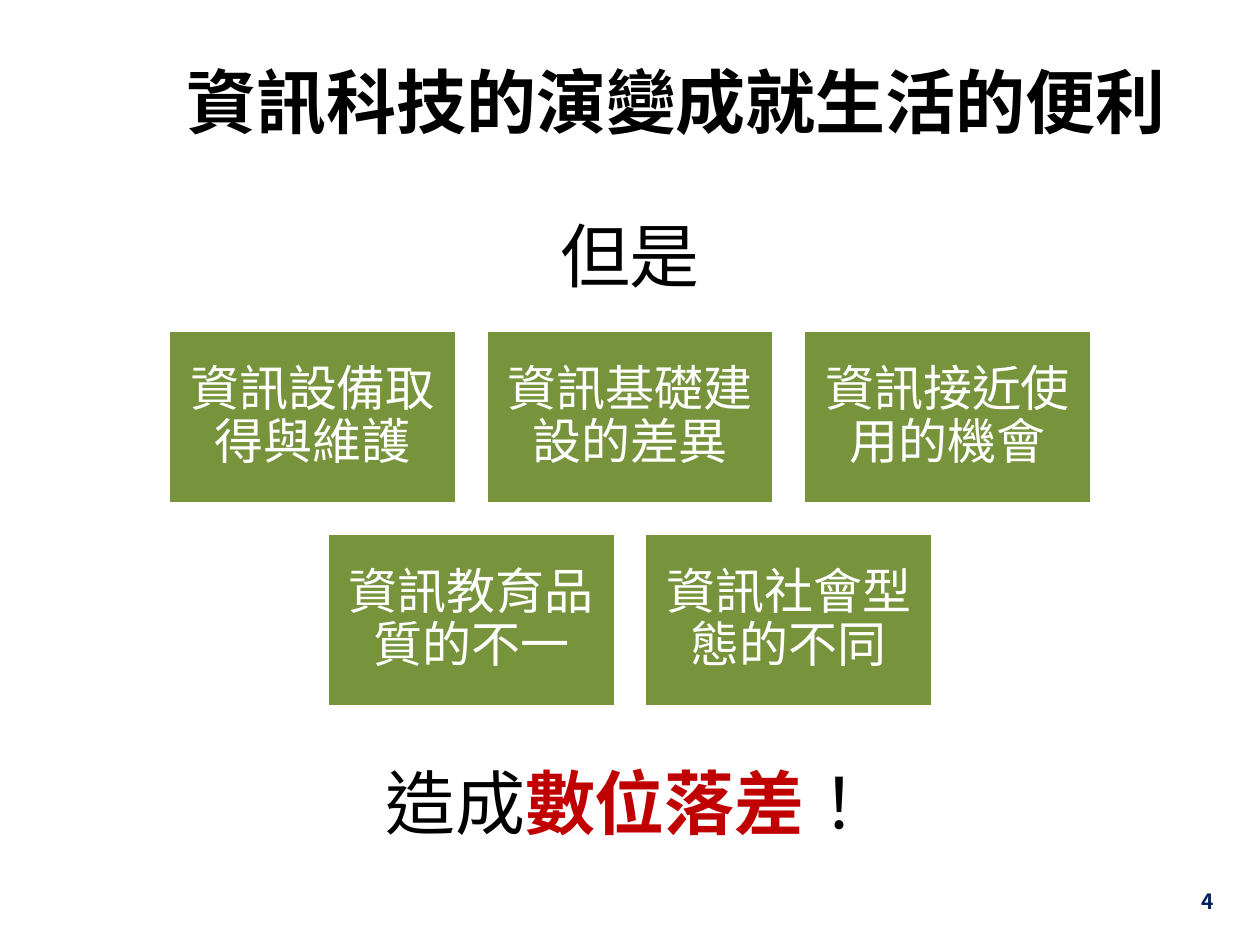
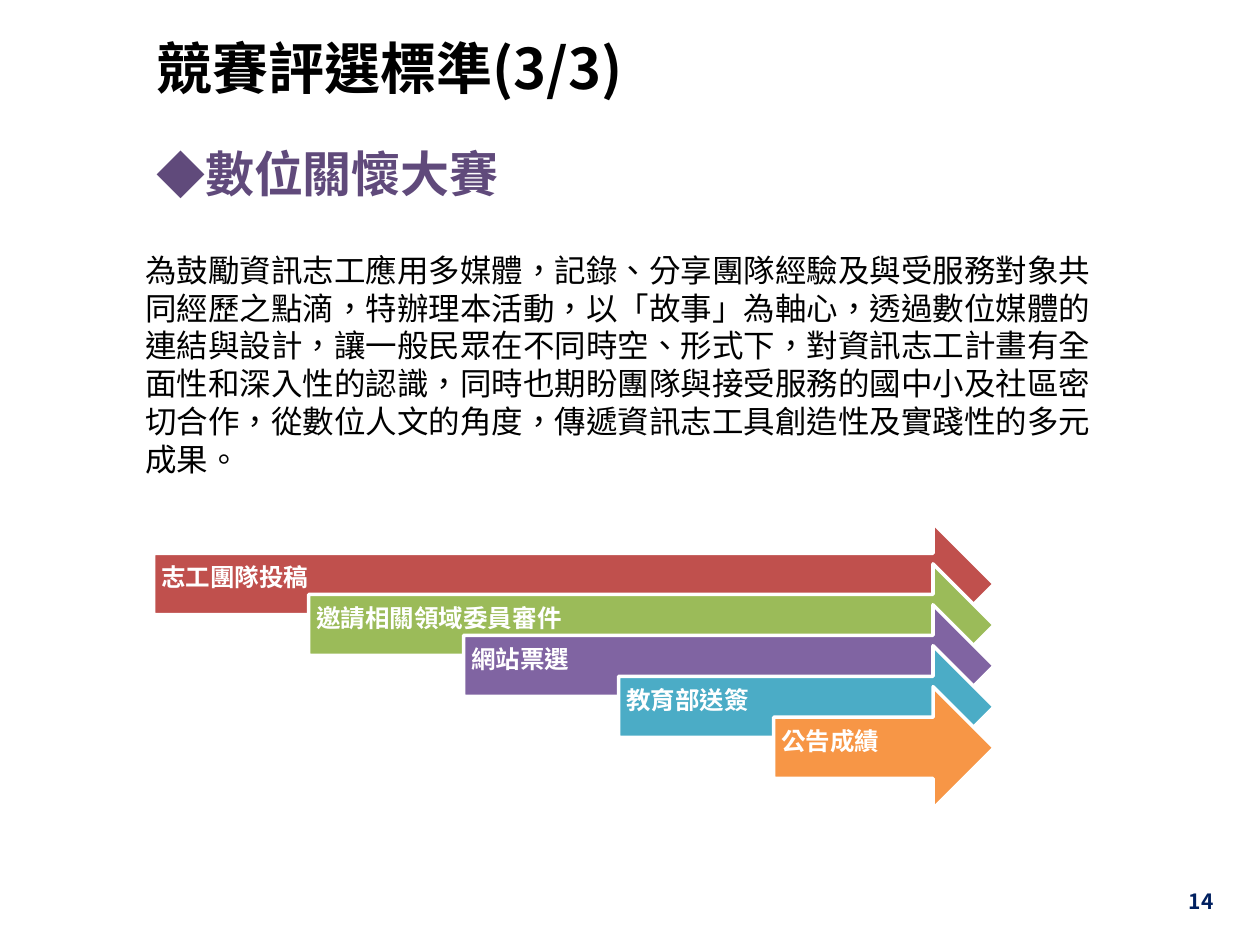
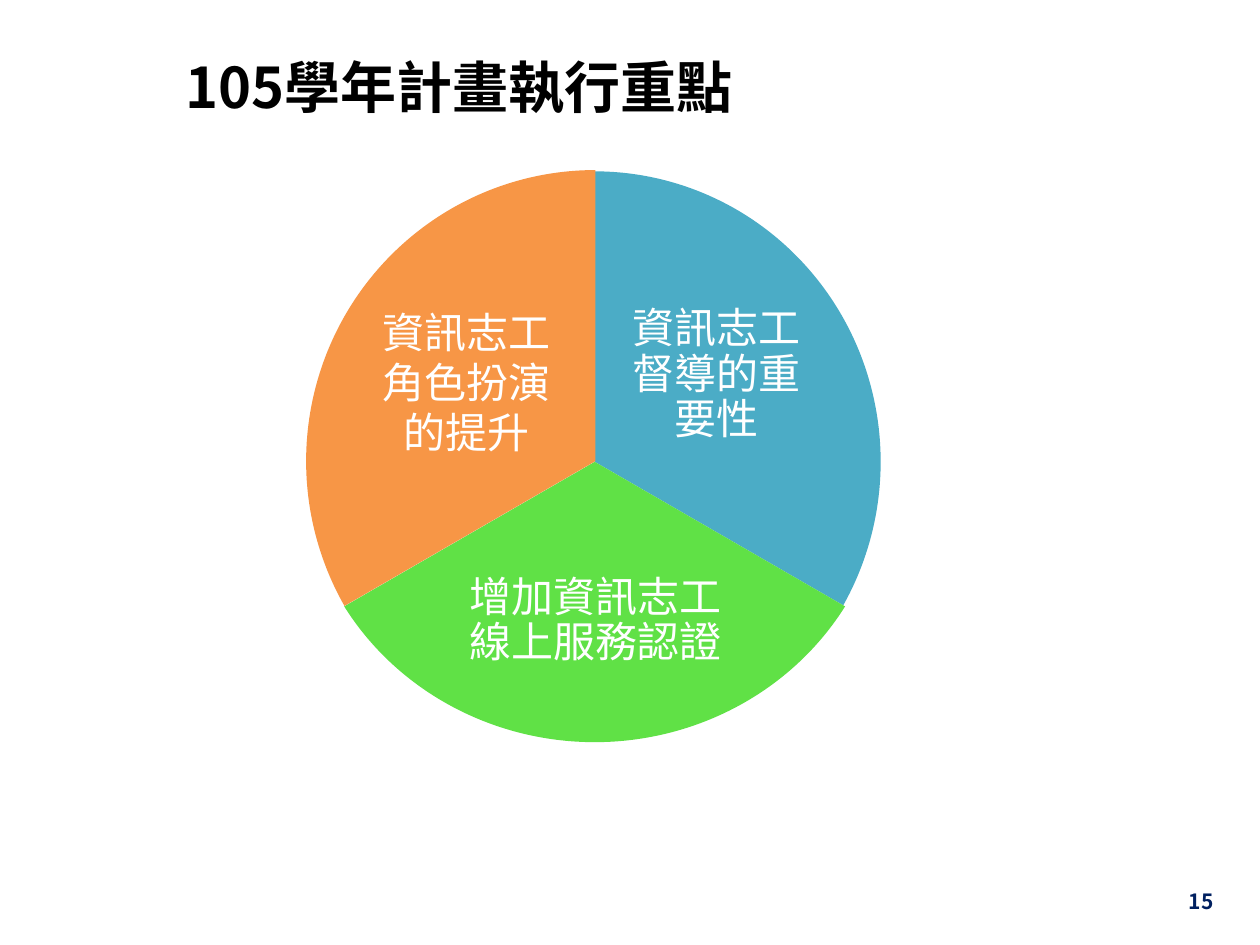
from lxml import etree
from pptx import Presentation
from pptx.dml.color import RGBColor
from pptx.enum.shapes import MSO_SHAPE
from pptx.enum.text import MSO_ANCHOR, MSO_AUTO_SIZE, PP_ALIGN
from pptx.oxml.ns import qn
from pptx.util import Inches, Pt

# Shared style
FONT = "Noto Sans CJK SC"
BLACK = RGBColor(0x00, 0x00, 0x00)
WHITE = RGBColor(0xFF, 0xFF, 0xFF)
NAVY = RGBColor(0x00, 0x20, 0x60)
RED = RGBColor(0xC0, 0x00, 0x00)
OLIVE = RGBColor(0x77, 0x93, 0x3C)
PLUM = RGBColor(0x60, 0x4A, 0x7B)
BRICK = RGBColor(0xC0, 0x50, 0x4D)
GREEN = RGBColor(0x9B, 0xBB, 0x59)
PURPLE = RGBColor(0x80, 0x64, 0xA2)
TEAL = RGBColor(0x4B, 0xAC, 0xC6)
ORANGE = RGBColor(0xF7, 0x96, 0x46)
LIME = RGBColor(0x60, 0xE1, 0x46)

RECT, ROUND_RECT = MSO_SHAPE.RECTANGLE, MSO_SHAPE.ROUNDED_RECTANGLE
ARROW, PIE = MSO_SHAPE.RIGHT_ARROW, MSO_SHAPE.PIE
LEFT, CENTER, RIGHT = PP_ALIGN.LEFT, PP_ALIGN.CENTER, PP_ALIGN.RIGHT
MIDDLE = MSO_ANCHOR.MIDDLE
NO_FIT = MSO_AUTO_SIZE.NONE

TITLE_AND_CONTENT, TITLE_ONLY = 1, 5


def inches(box):
    return [Inches(v) for v in box]


def add_run(p, text, size, color=BLACK, bold=False):
    r = p.add_run()
    r.text = text
    r.font.size = Pt(size)
    r.font.bold = bold
    r.font.color.rgb = color
    r.font.name = FONT
    rPr = r.font._element
    rPr.set("lang", "zh-TW")
    ea = etree.Element(qn("a:ea"), typeface=FONT)
    rPr.find(qn("a:latin")).addnext(ea)


def write(sp, runs, align=LEFT, spacing=1.0, insets=(0.1, 0.05, 0.1, 0.05)):
    """Fill a shape with one paragraph of (text, size, color, bold) runs."""
    tf = sp.text_frame
    tf.word_wrap = True
    tf.auto_size = NO_FIT
    tf.vertical_anchor = MIDDLE
    tf.margin_left, tf.margin_top, tf.margin_right, tf.margin_bottom = inches(insets)
    p = tf.paragraphs[0]
    p.alignment = align
    p.line_spacing = spacing
    p.space_before = Pt(0)
    for run in runs:
        add_run(p, *run)
    return p


def add_text(s, box, runs, **style):
    return write(s.shapes.add_textbox(*inches(box)), runs, **style)


def add_block(s, kind, box, fill, outline=None):
    sp = s.shapes.add_shape(kind, *inches(box))
    sp.shadow.inherit = False
    sp.fill.solid()
    sp.fill.fore_color.rgb = fill
    if outline is None:
        sp.line.fill.background()
    else:
        sp.line.color.rgb = outline
        sp.line.width = Pt(2)
    return sp


def place(placeholder, box):
    placeholder.left, placeholder.top, placeholder.width, placeholder.height = inches(box)
    return placeholder


def new_slide(prs, layout, number, title, box, size):
    s = prs.slides.add_slide(prs.slide_layouts[layout])
    write(place(s.shapes.title, box), [(title, size, BLACK, True)])
    add_text(s, (7.17, 6.95, 2.56, 0.4), [(str(number), 12, NAVY, True)], align=RIGHT)
    return s


# Slide regions
def card_grid(s, box, rows):
    """Rows of equal cards, each row centred in the box."""
    left, top, width, _ = box
    card_w, card_h, gap = 2.29, 1.38, 0.23
    for i, row in enumerate(rows):
        row_w = len(row) * (card_w + gap) - gap
        x = left + (width - row_w) / 2
        for j, text in enumerate(row):
            card = (x + j * (card_w + gap), top + i * (card_h + gap), card_w, card_h)
            write(add_block(s, RECT, card, OLIVE, WHITE), [(text, 28, WHITE)],
                  align=CENTER, spacing=0.9, insets=(0.12,) * 4)


def bullet_heading(s, box, text):
    p = write(place(s.placeholders[1], box), [(text, 28, PLUM, True)])
    pPr = p._p.get_or_add_pPr()
    pPr.set("marL", str(Inches(0.38)))
    pPr.set("indent", str(-Inches(0.38)))
    etree.SubElement(pPr, qn("a:buFont"), typeface=FONT)
    etree.SubElement(pPr, qn("a:buChar"), char="◆")


def intro_panel(s, box, text):
    panel = add_block(s, ROUND_RECT, box, WHITE)
    panel.adjustments[0] = 0.035
    color = panel.fill._xPr.find(qn("a:solidFill"))[0]
    etree.SubElement(color, qn("a:alpha"), val="50000")
    write(panel, [(text, 18)])


def arrow_steps(s, box, steps):
    """Stepped arrows that share one right edge."""
    left, top, width, height = box
    step_x, step_y, arrow_h = 1.23, 0.325, 0.97
    for i, (text, color) in enumerate(steps):
        arrow = (left + i * step_x, top + i * step_y, width - i * step_x, arrow_h)
        write(add_block(s, ARROW, arrow, color, WHITE), [(text, 14, WHITE, True)],
              spacing=0.9, insets=(0.06, 0.06, 0.28, 0.15))


def pie_wheel(s, box, sectors):
    """Three sectors; boxes are relative to the wheel, angles in degrees."""
    left, top = box[:2]
    for (x, y, w, h), start, color, label, text, spacing in sectors:
        sp = add_block(s, PIE, (left + x, top + y, w, h), color)
        for i, angle in enumerate((start, (start + 120) % 360)):
            sp.adjustments[i] = angle * 0.6
        lx, ly, lw, lh = label
        add_text(s, (left + lx, top + ly, lw, lh), [(text, 24, WHITE)],
                 align=CENTER, spacing=spacing, insets=(0.03,) * 4)


# Slides
def divide_slide(prs):
    s = new_slide(prs, TITLE_ONLY, 4, "資訊科技的演變成就生活的便利",
                  (1.38, 0.21, 8.04, 1.18), 40)
    add_text(s, (0.75, 1.55, 8.5, 1.02), [("但是", 40)], align=CENTER, spacing=0.9)
    card_grid(s, (0.75, 2.62, 8.5, 2.99), [
        ["資訊設備取得與維護", "資訊基礎建設的差異", "資訊接近使用的機會"],
        ["資訊教育品質的不一", "資訊社會型態的不同"],
    ])
    add_text(s, (0.75, 5.89, 8.5, 1.02),
             [("造成", 40), ("數位落差", 40, RED, True), ("！", 40)],
             align=CENTER, spacing=0.9)


def contest_slide(prs):
    s = new_slide(prs, TITLE_AND_CONTENT, 14, "競賽評選標準(3/3)",
                  (1.14, 0.21, 8.59, 0.64), 32)
    bullet_heading(s, (1.14, 1.04, 8.59, 0.66), "數位關懷大賽")
    intro_panel(s, (1.03, 1.7, 7.98, 2.38),
                "為鼓勵資訊志工應用多媒體，記錄、分享團隊經驗及與受服務對象共同經歷之點滴，"
                "特辦理本活動，以「故事」為軸心，透過數位媒體的連結與設計，讓一般民眾在不同時空、"
                "形式下，對資訊志工計畫有全面性和深入性的認識，同時也期盼團隊與接受服務的國中小及"
                "社區密切合作，從數位人文的角度，傳遞資訊志工具創造性及實踐性的多元成果。")
    arrow_steps(s, (1.22, 4.15, 6.67, 2.27), [
        ("志工團隊投稿", BRICK),
        ("邀請相關領域委員審件", GREEN),
        ("網站票選", PURPLE),
        ("教育部送簽", TEAL),
        ("公告成績", ORANGE),
    ])


def focus_slide(prs):
    s = new_slide(prs, TITLE_ONLY, 15, "105學年計畫執行重點",
                  (1.37, 0.36, 8.59, 0.64), 32)
    pie_wheel(s, (2.4, 1.35, 4.64, 4.62), [
        ((0.05, 0.01, 4.54, 4.61), 270, TEAL,
         (2.52, 0.86, 1.54, 1.54), "資訊志工督導的重要性", 0.9),
        ((0, 0.09, 4.64, 4.45), 30, LIME,
         (1.28, 2.89, 2.1, 1.38), "增加資訊志工線上服務認證", 0.9),
        ((0.03, 0, 4.59, 4.62), 150, ORANGE,
         (0.52, 0.91, 1.56, 1.54), "資訊志工角色扮演的提升", 1.0),
    ])


def main():
    prs = Presentation()
    prs.slide_width, prs.slide_height = Inches(10), Inches(7.5)
    divide_slide(prs)
    contest_slide(prs)
    focus_slide(prs)
    prs.save("out.pptx")


if __name__ == "__main__":
    main()
